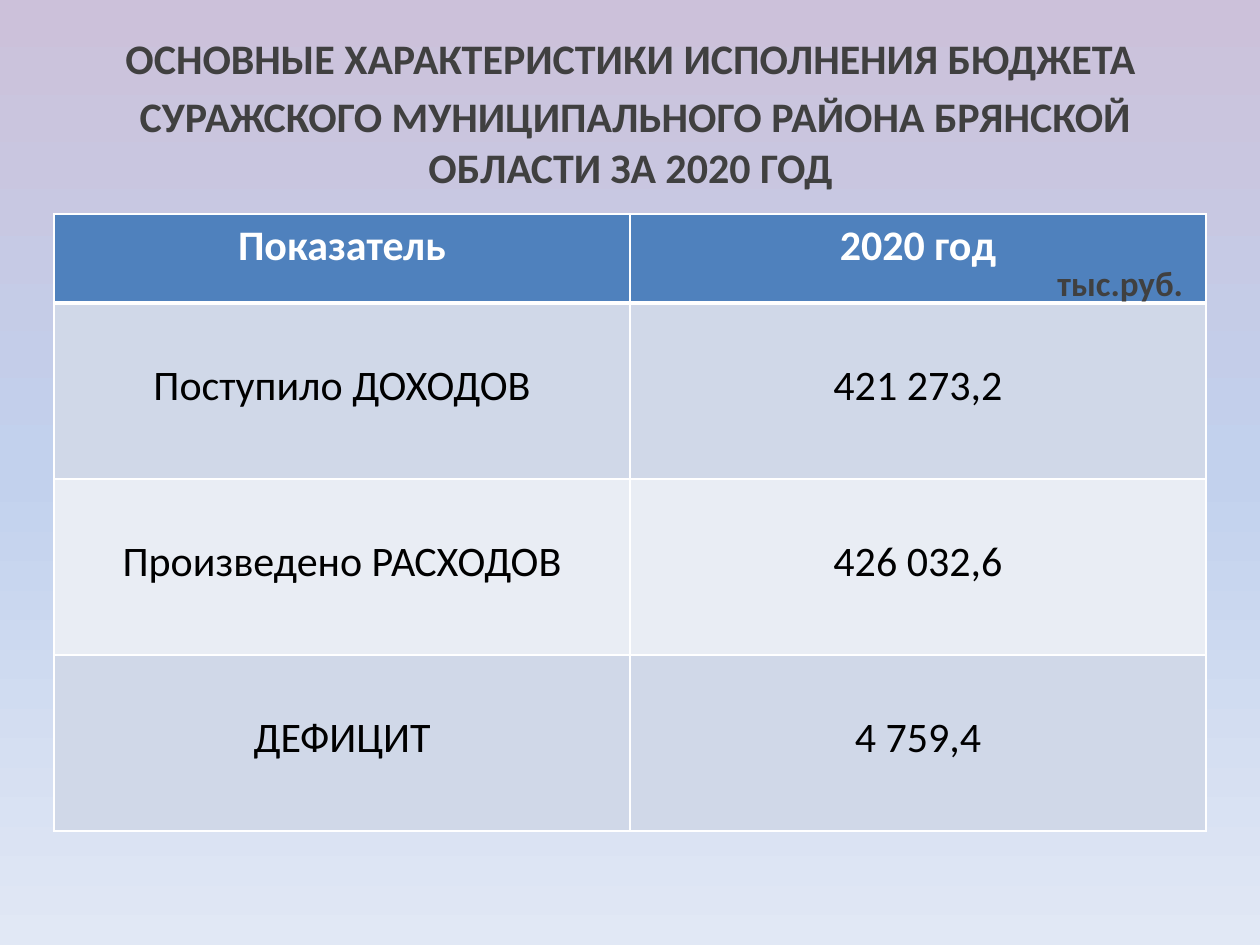
from copy import deepcopy
from dataclasses import dataclass

from lxml import etree
from pptx import Presentation
from pptx import util as u
from pptx.dml.color import RGBColor
from pptx.enum import text
from pptx.oxml.ns import qn

TITLE = [
    "ОСНОВНЫЕ ХАРАКТЕРИСТИКИ ИСПОЛНЕНИЯ БЮДЖЕТА",
    " СУРАЖСКОГО МУНИЦИПАЛЬНОГО РАЙОНА БРЯНСКОЙ ОБЛАСТИ ЗА 2020 ГОД",
]
UNIT = ["тыс.руб."]
BUDGET = [
    ("Показатель", "2020 год"),
    ("Поступило ДОХОДОВ", "421 273,2"),
    ("Произведено РАСХОДОВ", "426 032,6"),
    ("ДЕФИЦИТ", "4 759,4"),
]

PX = u.Inches(1) / 126
SLIDE = (1260, 945)
TITLE_BOX = (35, 26, 1191, 129)
UNIT_BOX = (1045, 255, 158, 49)
TABLE_AT = (54, 214)
COLUMN_WIDTH = 576
HEADER_HEIGHT, ROW_HEIGHT = 89, 176
BODY_MARGIN_BOTTOM = 16


@dataclass(frozen=True)
class Theme:
    font: str = "Calibri"
    heading: str = "404040"
    header_text: str = "FFFFFF"
    body_text: str = "000000"
    header_fill: str = "4F81BD"
    bands: tuple = ("D0D8E8", "E9EDF4")
    border: str = "FFFFFF"
    background: tuple = ((0, "CCC1DA"), (0.5, "C2D1ED"), (1, "E1E8F5"))
    size: int = 24
    unit_size: int = 20
    thin: int = 1
    thick: int = 3


THEME = Theme()


def px(length):
    return u.Emu(round(length * PX))


def write(paragraph, words, size, color, bold, align):
    paragraph.alignment = align
    run = paragraph.add_run()
    run.text = words
    font = run.font
    font.name, font.size, font.bold = THEME.font, u.Pt(size), bold
    font.color.rgb = RGBColor.from_string(color)


def paint_background(slide):
    fill = slide.background.fill
    fill.gradient()
    fill.gradient_angle = 270
    stop_list = next(slide.element.iter(qn("a:gsLst")))
    stop_list.append(deepcopy(stop_list[-1]))
    for stop, (position, color) in zip(fill.gradient_stops, THEME.background):
        stop.position = position
        stop.color.rgb = RGBColor.from_string(color)


def add_heading(slide, box, lines, size, align):
    frame = slide.shapes.add_textbox(*map(px, box)).text_frame
    frame.word_wrap = True
    for index, words in enumerate(lines):
        paragraph = frame.add_paragraph() if index else frame.paragraphs[0]
        paragraph.space_before = u.Pt(size * 0.2)
        write(paragraph, words, size, THEME.heading, True, align)


def set_borders(cell, top, bottom):
    properties = cell._tc.get_or_add_tcPr()
    widths = {"lnL": THEME.thin, "lnR": THEME.thin, "lnT": top, "lnB": bottom}
    for side, width in widths.items():
        line = etree.SubElement(properties, qn(f"a:{side}"), w=str(u.Pt(width)))
        solid = etree.SubElement(line, qn("a:solidFill"))
        etree.SubElement(solid, qn("a:srgbClr"), val=THEME.border)


def style_cell(cell, words, row):
    header = row == 0
    set_borders(
        cell,
        top=THEME.thick if row == 1 else THEME.thin,
        bottom=THEME.thick if header else THEME.thin,
    )
    fill = THEME.header_fill if header else THEME.bands[(row - 1) % 2]
    cell.fill.solid()
    cell.fill.fore_color.rgb = RGBColor.from_string(fill)
    if not header:
        cell.vertical_anchor = text.MSO_ANCHOR.MIDDLE
        cell.margin_bottom = px(BODY_MARGIN_BOTTOM)
    color = THEME.header_text if header else THEME.body_text
    write(cell.text_frame.paragraphs[0], words, THEME.size, color, header,
          text.PP_ALIGN.CENTER)


def add_budget(slide):
    heights = [HEADER_HEIGHT] + [ROW_HEIGHT] * (len(BUDGET) - 1)
    columns = len(BUDGET[0])
    table = slide.shapes.add_table(
        len(BUDGET), columns, *map(px, TABLE_AT),
        px(COLUMN_WIDTH * columns), px(sum(heights)),
    ).table
    for column in table.columns:
        column.width = px(COLUMN_WIDTH)
    for row, (entries, height) in enumerate(zip(BUDGET, heights)):
        table.rows[row].height = px(height)
        for column, words in enumerate(entries):
            style_cell(table.cell(row, column), words, row)


def main():
    deck = Presentation()
    deck.slide_width, deck.slide_height = map(px, SLIDE)
    slide = deck.slides.add_slide(deck.slide_layouts[6])
    paint_background(slide)
    add_heading(slide, TITLE_BOX, TITLE, THEME.size, text.PP_ALIGN.CENTER)
    add_budget(slide)
    add_heading(slide, UNIT_BOX, UNIT, THEME.unit_size, text.PP_ALIGN.LEFT)
    deck.save("out.pptx")


if __name__ == "__main__":
    main()
